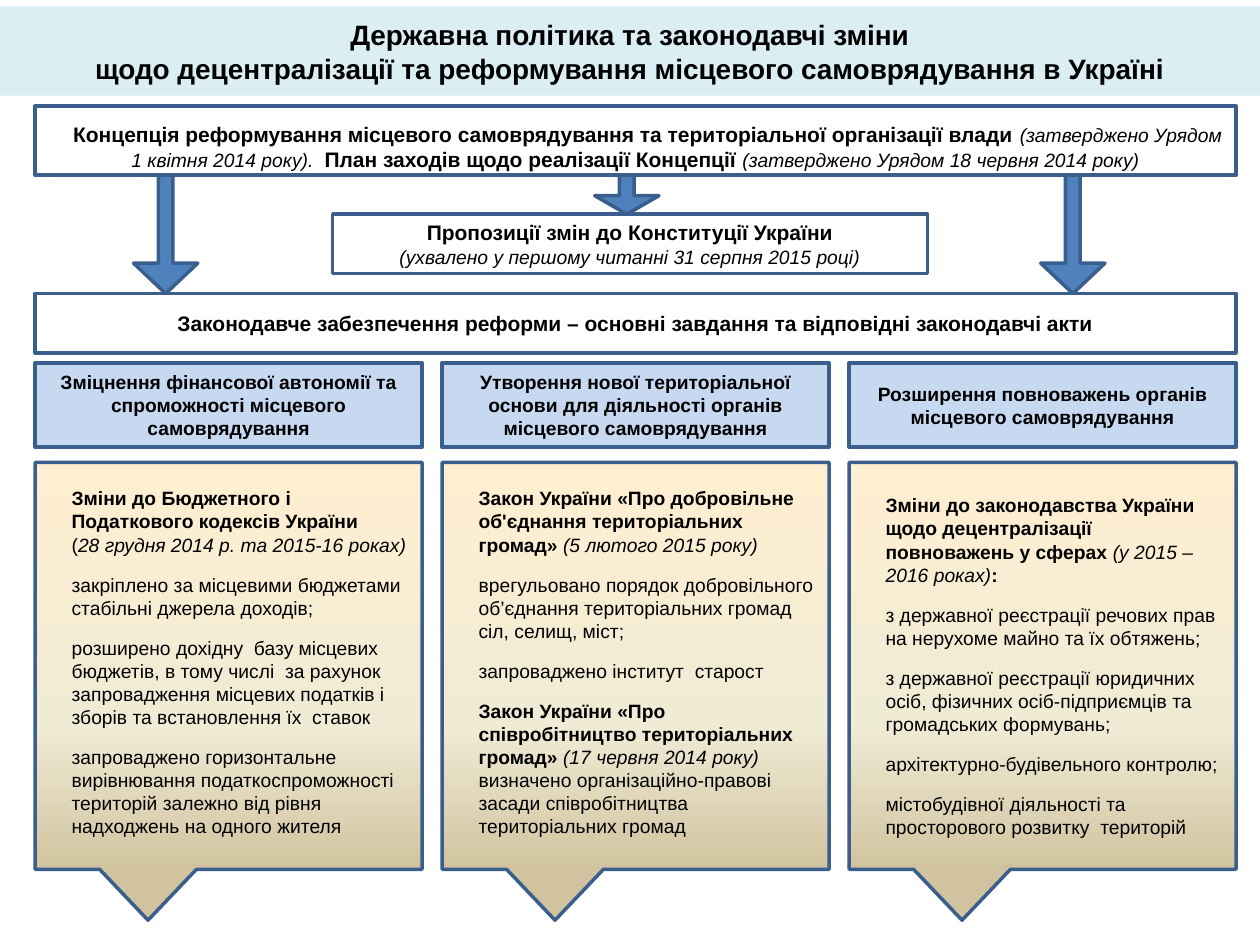
from copy import deepcopy
from typing import NamedTuple

from pptx import Presentation
from pptx.dml.color import RGBColor
from pptx.enum import shapes, text
from pptx.oxml.ns import qn
from pptx.util import Inches, Pt

COLORS = {"title": "DBEEF4", "header": "C6D9F1", "arrow": "4F81BD",
          "border": "3A5F8C", "text": "000000"}
CALLOUT_STOPS = [(0, "FFEFD1"), (0.65, "F0EBD5"), (1, "D1C39F")]
LEFT, FULL_W, COL_W = 0.28, 9.53, 3.07
COL_STEP = (FULL_W - COL_W) / 2
INDENT, GAP = 0.19, 9.6
KIND = shapes.MSO_SHAPE


class Box(NamedTuple):
    x: float
    y: float
    w: float
    h: float


class Run(NamedTuple):
    text: str
    size: float = 11
    bold: bool = False
    italic: bool = False


class Para(NamedTuple):
    runs: list[Run]
    gap: float = 0
    first_indent: float = 0
    margin: float = 0
    align: text.PP_ALIGN = text.PP_ALIGN.CENTER


class Column(NamedTuple):
    header: str
    paras: list[Para]
    bottom_inset: float


def bold(words: str, size: float = 12) -> Run:
    return Run(words, size, bold=True)


def italic(words: str) -> Run:
    return Run(words, italic=True)


def item(*runs: Run, gap: float = GAP) -> Para:
    return Para(list(runs), gap, margin=INDENT, align=text.PP_ALIGN.LEFT)


COLUMNS = [
    Column("Зміцнення фінансової автономії та спроможності місцевого самоврядування", [
        item(bold("Зміни до Бюджетного і Податкового кодексів України", 11), gap=0),
        item(Run("("), italic("28 грудня 2014 р. та 2015-16 роках)"), gap=0),
        item(Run("закріплено за місцевими бюджетами стабільні джерела доходів;")),
        item(Run("розширено дохідну  базу місцевих бюджетів, в тому числі  за рахунок "
                 "запровадження місцевих податків і зборів та встановлення їх  ставок")),
        item(Run("запроваджено горизонтальне вирівнювання податкоспроможності територій "
                 "залежно від рівня надходжень на одного жителя")),
    ], 0.11),
    Column("Утворення нової територіальної основи для діяльності органів "
           "місцевого самоврядування", [
        item(bold("Закон України «Про добровільне об'єднання територіальних громад» ", 11),
             italic("(5 лютого 2015 року)"), gap=0),
        item(Run("врегульовано порядок добровільного об’єднання територіальних громад "
                 "сіл, селищ, міст;")),
        item(Run("запроваджено інститут  старост")),
        item(bold("Закон України «Про співробітництво територіальних громад» ", 11),
             italic("(17 червня 2014 року)")),
        item(Run("визначено організаційно-правові засади співробітництва "
                 "територіальних громад"), gap=0),
    ], 0.11),
    Column("Розширення повноважень органів місцевого самоврядування", [
        item(bold("Зміни до законодавства України щодо децентралізації повноважень "
                  "у сферах ", 11),
             italic("(у 2015 – 2016 роках)"), bold(":", 11), gap=0),
        item(Run("з державної реєстрації речових прав на нерухоме майно та їх обтяжень;")),
        item(Run("з державної реєстрації юридичних осіб, фізичних осіб-підприємців "
                 "та громадських формувань;")),
        item(Run("архітектурно-будівельного контролю;")),
        item(Run("містобудівної діяльності та просторового розвитку  територій")),
    ], 0.05),
]


def rgb(name: str) -> RGBColor:
    return RGBColor.from_string(COLORS[name])


def add_box(s, kind, box: Box, fill: str | None = None, border: bool = True):
    sp = s.shapes.add_shape(kind, *map(Inches, box))
    sp.shadow.inherit = False
    if fill:
        sp.fill.solid()
        sp.fill.fore_color.rgb = rgb(fill)
    else:
        sp.fill.background()
    if border:
        sp.line.color.rgb = rgb("border")
        sp.line.width = Pt(2)
    else:
        sp.line.fill.background()
    return sp


def write(sp, paras: list[Para], top: float = 0.05, bottom: float = 0.05) -> None:
    tf = sp.text_frame
    tf.word_wrap = True
    tf.vertical_anchor = text.MSO_ANCHOR.MIDDLE
    tf.margin_top, tf.margin_bottom = Inches(top), Inches(bottom)
    for i, para in enumerate(paras):
        p = tf.add_paragraph() if i else tf.paragraphs[0]
        p.alignment = para.align
        p.space_before = Pt(para.gap)
        pPr = p._p.get_or_add_pPr()
        pPr.set("marL", str(Inches(para.margin)))
        pPr.set("indent", str(Inches(para.first_indent)))
        for run in para.runs:
            r = p.add_run()
            r.text = run.text
            r.font.name, r.font.size = "Arial", Pt(run.size)
            r.font.bold, r.font.italic = run.bold, run.italic
            r.font.color.rgb = rgb("text")


def fill_gradient(sp) -> None:
    """Shade the callout from top to bottom through three stops."""
    sp.fill.gradient()
    sp.fill.gradient_angle = 270
    gs_list = sp._element.spPr.find(qn("a:gradFill")).find(qn("a:gsLst"))
    gs_list.append(deepcopy(gs_list[0]))
    for stop, (position, color) in zip(sp.fill.gradient_stops, CALLOUT_STOPS):
        stop.position = position
        stop.color.rgb = RGBColor.from_string(color)


def add_column(s, x: float, column: Column) -> None:
    header = add_box(s, KIND.FLOWCHART_PROCESS, Box(x, 2.88, COL_W, 0.67), "header")
    write(header, [Para([bold(column.header, 11)])])
    callout = add_box(s, KIND.RECTANGULAR_CALLOUT, Box(x, 3.67, COL_W, 3.23))
    fill_gradient(callout)
    write(callout, column.paras, bottom=column.bottom_inset)


def add_arrow(s, x: float, height: float) -> None:
    sp = add_box(s, KIND.DOWN_ARROW, Box(x, 1.39, 0.51, height), "arrow")
    sp.adjustments[0], sp.adjustments[1] = 0.229, 0.473


def main() -> None:
    prs = Presentation()
    prs.slide_width, prs.slide_height = Inches(10), Inches(7.5)
    s = prs.slides.add_slide(prs.slide_layouts[6])

    title = add_box(s, KIND.RECTANGLE, Box(0, 0.05, 10, 0.71), "title", border=False)
    write(title, [
        Para([bold("Державна політика та законодавчі зміни", 16)]),
        Para([bold("щодо децентралізації та реформування місцевого самоврядування "
                   "в Україні", 16)]),
    ])

    concept = add_box(s, KIND.FLOWCHART_PROCESS, Box(LEFT, 0.84, FULL_W, 0.55))
    write(concept, [Para([
        bold("Концепція реформування місцевого самоврядування та територіальної "
             "організації влади "),
        italic("(затверджено Урядом 1 квітня 2014 року).  "),
        bold("План заходів щодо реалізації Концепції "),
        italic("(затверджено Урядом 18 червня 2014 року)"),
    ], first_indent=INDENT)], top=0.1, bottom=0)

    constitution = add_box(s, KIND.FLOWCHART_PROCESS, Box(2.64, 1.7, 4.72, 0.47))
    write(constitution, [
        Para([bold("Пропозиції змін до Конституції України")]),
        Para([italic("(ухвалено у першому читанні 31 серпня 2015 році)")]),
    ])

    laws = add_box(s, KIND.FLOWCHART_PROCESS, Box(LEFT, 2.33, FULL_W, 0.47))
    write(laws, [Para([bold("Законодавче забезпечення реформи – основні завдання "
                            "та відповідні законодавчі акти")])])

    for i, column in enumerate(COLUMNS):
        add_column(s, LEFT + i * COL_STEP, column)
    for x, height in [(1.06, 0.94), (8.26, 0.94), (4.72, 0.31)]:
        add_arrow(s, x, height)

    prs.save("out.pptx")


if __name__ == "__main__":
    main()
